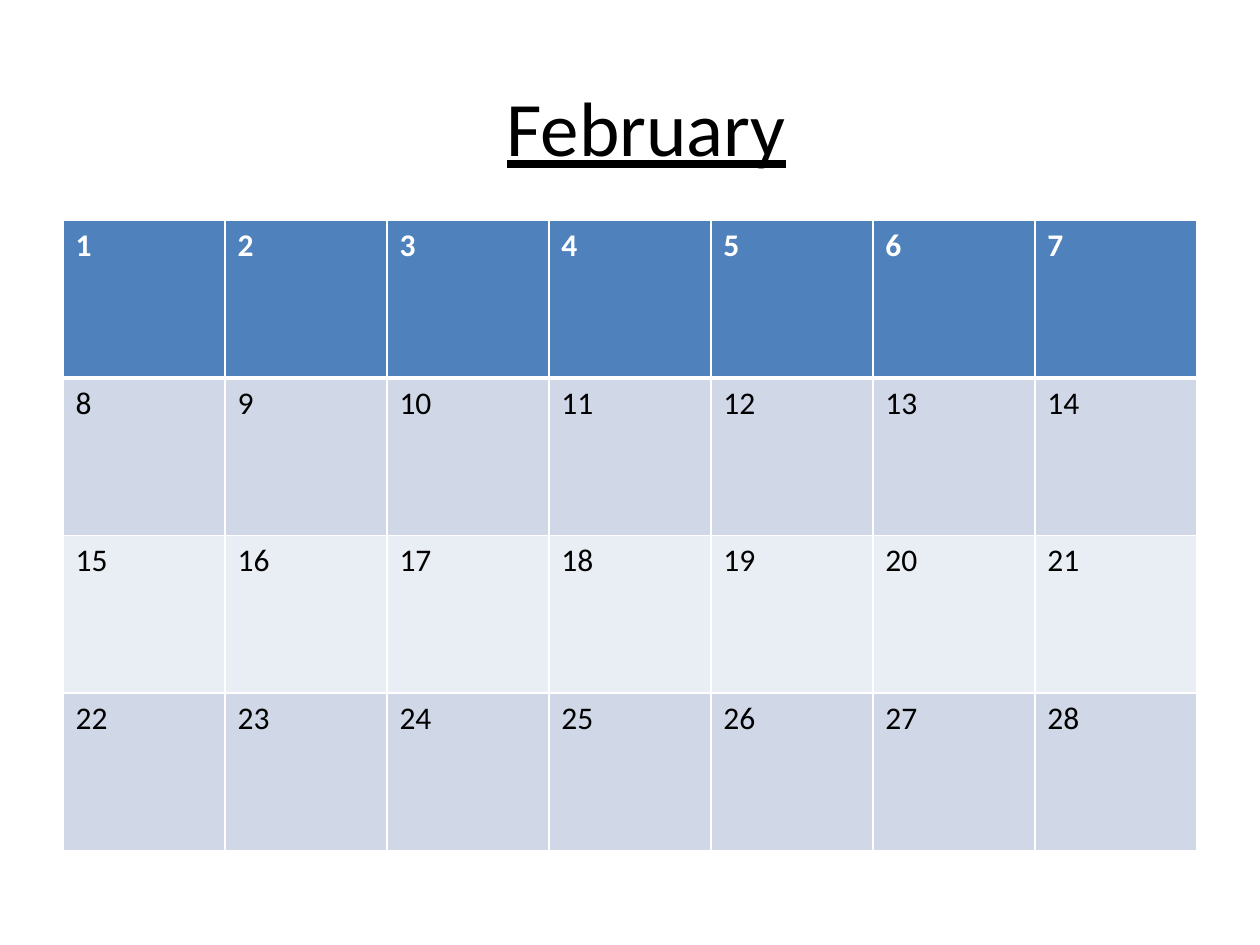
from dataclasses import dataclass

from lxml.etree import SubElement
from pptx import Presentation
from pptx.dml.color import RGBColor
from pptx.enum.text import MSO_ANCHOR, PP_ALIGN
from pptx.oxml.ns import qn
from pptx.util import Inches, Pt


@dataclass(frozen=True)
class Theme:
    font: str = "Calibri"
    title_size: int = 44
    day_size: int = 18
    ink: str = "000000"
    paper: str = "FFFFFF"
    first_week: str = "4F81BD"
    bands: tuple = ("E9EDF4", "D0D8E8")
    rule: int = 1
    heavy_rule: int = 3


THEME = Theme()
DAYS_PER_WEEK, WEEKS = 7, 4


def style_run(run, size, color, bold=False):
    run.font.name = THEME.font
    run.font.size = Pt(size)
    run.font.bold = bold
    run.font.color.rgb = RGBColor.from_string(color)


def add_borders(cell, top, bottom):
    """Rule all four sides of a cell; top and bottom are widths in points."""
    properties = cell._tc.get_or_add_tcPr()
    widths = {"L": THEME.rule, "R": THEME.rule, "T": top, "B": bottom}
    for side, width in widths.items():
        line = SubElement(properties, qn(f"a:ln{side}"), w=str(Pt(width)))
        fill = SubElement(line, qn("a:solidFill"))
        SubElement(fill, qn("a:srgbClr"), val=THEME.paper)


prs = Presentation()
prs.slide_width, prs.slide_height = Inches(10), Inches(7.5)
slide = prs.slides.add_slide(prs.slide_layouts[5])

# Month name
month = slide.shapes.title
month.left, month.top = Inches(3.42), Inches(0.58)
month.width, month.height = Inches(3.42), Inches(0.84)
month.text_frame.text = "February"
month.text_frame.vertical_anchor = MSO_ANCHOR.TOP
heading = month.text_frame.paragraphs[0]
heading.alignment = PP_ALIGN.CENTER
style_run(heading.runs[0], THEME.title_size, THEME.ink)
heading.runs[0].font.underline = True

# One row per week, one column per day
calendar = slide.shapes.add_table(
    WEEKS, DAYS_PER_WEEK, Inches(0.5), Inches(1.75), Inches(9), Inches(5)
).table

for week in range(WEEKS):
    is_first = week == 0
    background = THEME.first_week if is_first else THEME.bands[week % 2]
    top = THEME.heavy_rule if week == 1 else THEME.rule
    bottom = THEME.heavy_rule if is_first else THEME.rule
    for weekday in range(DAYS_PER_WEEK):
        day = calendar.cell(week, weekday)
        add_borders(day, top, bottom)
        day.fill.solid()
        day.fill.fore_color.rgb = RGBColor.from_string(background)
        day.text_frame.text = str(week * DAYS_PER_WEEK + weekday + 1)
        style_run(
            day.text_frame.paragraphs[0].runs[0],
            THEME.day_size,
            THEME.paper if is_first else THEME.ink,
            bold=is_first,
        )

prs.save("out.pptx")
